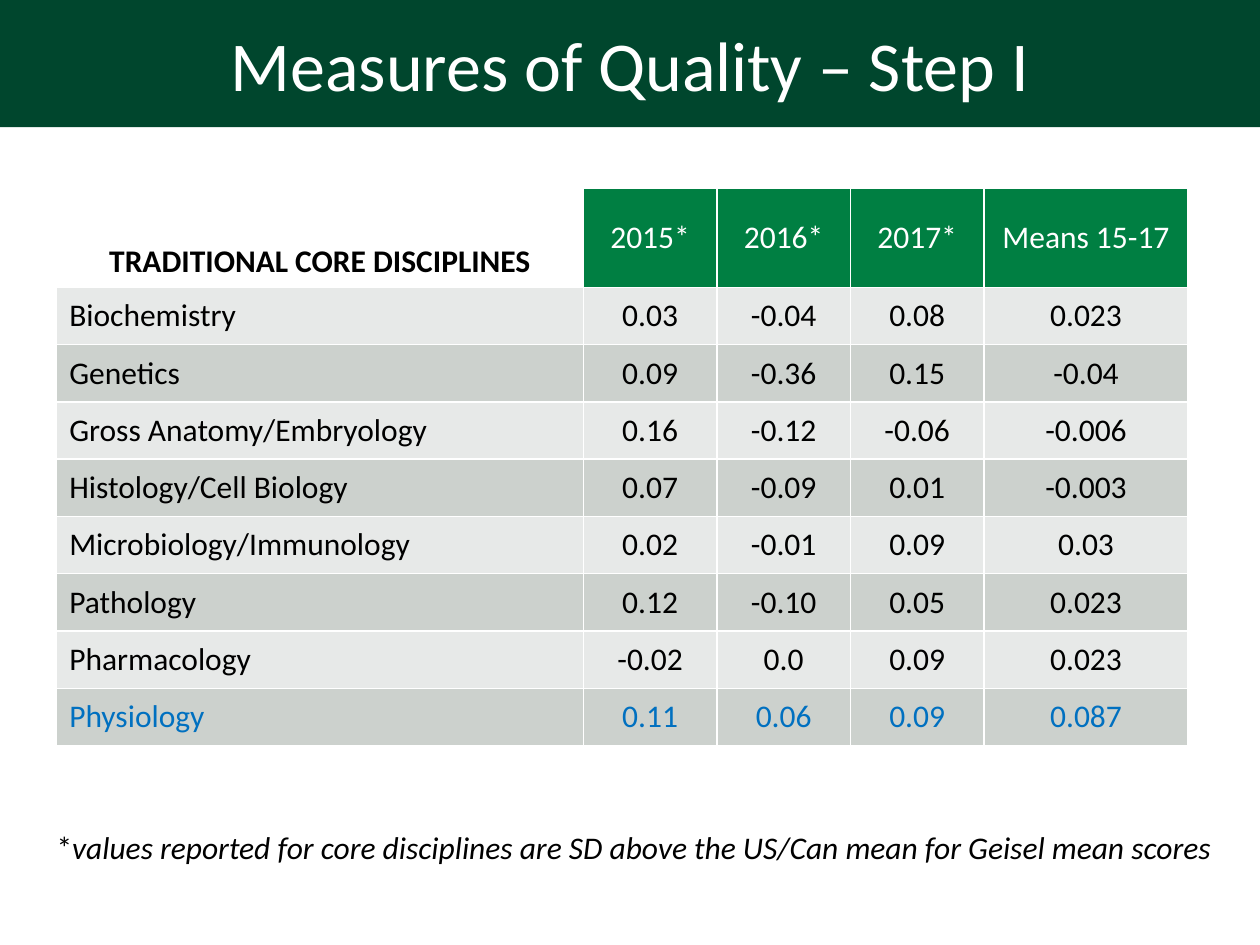
from lxml import etree
from pptx import Presentation
from pptx.dml.color import RGBColor
from pptx.enum.text import MSO_ANCHOR, MSO_AUTO_SIZE, PP_ALIGN
from pptx.oxml.ns import qn
from pptx.util import Inches, Pt

FONT = "Calibri"
COLORS = {
    "banner": "00462D",
    "header": "007F42",
    "light": "E7E9E8",
    "dark": "CCD1CD",
    "white": "FFFFFF",
    "black": "000000",
    "highlight": "0070C0",
}
COL_WIDTHS = [4.18, 1.06, 1.06, 1.06, 1.62]
HEADER_HEIGHT, ROW_HEIGHT = 0.79, 0.455
HEADERS = ["TRADITIONAL CORE DISCIPLINES", "2015*", "2016*", "2017*", "Means 15-17"]
SCORES = [
    ["Biochemistry", "0.03", "-0.04", "0.08", "0.023"],
    ["Genetics", "0.09", "-0.36", "0.15", "-0.04"],
    ["Gross Anatomy/Embryology", "0.16", "-0.12", "-0.06", "-0.006"],
    ["Histology/Cell Biology", "0.07", "-0.09", "0.01", "-0.003"],
    ["Microbiology/Immunology", "0.02", "-0.01", "0.09", "0.03"],
    ["Pathology", "0.12", "-0.10", "0.05", "0.023"],
    ["Pharmacology", "-0.02", "0.0", "0.09", "0.023"],
    ["Physiology", "0.11", "0.06", "0.09", "0.087"],
]


def rgb(name):
    return RGBColor.from_string(COLORS[name])


def style_run(r, color, size=18, bold=False, italic=False):
    r.font.name, r.font.size = FONT, Pt(size)
    r.font.bold, r.font.italic = bold, italic
    r.font.color.rgb = rgb(color)


def set_borders(cell):
    tc_pr = cell._tc.get_or_add_tcPr()
    for side in ("a:lnL", "a:lnR", "a:lnT", "a:lnB"):
        ln = etree.SubElement(tc_pr, qn(side), w=str(Pt(1)))
        fill = etree.SubElement(ln, qn("a:solidFill"))
        etree.SubElement(fill, qn("a:srgbClr"), val=COLORS["white"])


def fill_cell(cell, text, color, fill=None, align=PP_ALIGN.CENTER,
              anchor=MSO_ANCHOR.MIDDLE, bold=False):
    set_borders(cell)
    if fill:
        cell.fill.solid()
        cell.fill.fore_color.rgb = rgb(fill)
    else:
        cell.fill.background()
    cell.vertical_anchor = anchor
    cell.text_frame.text = text
    p = cell.text_frame.paragraphs[0]
    p.alignment = align
    style_run(p.runs[0], color, bold=bold)


def add_title(s, text):
    sp = s.shapes.title
    sp.left, sp.top, sp.width, sp.height = 0, 0, Inches(10), Inches(1.01)
    sp.fill.solid()
    sp.fill.fore_color.rgb = rgb("banner")
    tf = sp.text_frame
    tf.text = text
    tf.vertical_anchor = MSO_ANCHOR.MIDDLE
    p = tf.paragraphs[0]
    p.alignment = PP_ALIGN.CENTER
    style_run(p.runs[0], "white", size=40)


def add_score_table(s):
    height = HEADER_HEIGHT + ROW_HEIGHT * len(SCORES)
    table = s.shapes.add_table(
        len(SCORES) + 1, len(HEADERS), Inches(0.45), Inches(1.49),
        Inches(sum(COL_WIDTHS)), Inches(height)).table
    for column, width in zip(table.columns, COL_WIDTHS):
        column.width = Inches(width)
    for i, row in enumerate(table.rows):
        row.height = Inches(ROW_HEIGHT if i else HEADER_HEIGHT)

    # Header row: the corner cell stays unfilled
    fill_cell(table.cell(0, 0), HEADERS[0], "black",
              anchor=MSO_ANCHOR.BOTTOM, bold=True)
    for col, text in enumerate(HEADERS[1:], 1):
        fill_cell(table.cell(0, col), text, "white", "header")

    # Banded body, with the last discipline highlighted
    for row, values in enumerate(SCORES, 1):
        band = "light" if row % 2 else "dark"
        color = "highlight" if row == len(SCORES) else "black"
        for col, text in enumerate(values):
            align = PP_ALIGN.CENTER if col else PP_ALIGN.LEFT
            fill_cell(table.cell(row, col), text, color, band, align)


def add_footnote(s, mark, text):
    sp = s.shapes.add_textbox(Inches(0.35), Inches(6.52), Inches(9.52), Inches(0.4))
    tf = sp.text_frame
    tf.word_wrap = False
    tf.auto_size = MSO_AUTO_SIZE.SHAPE_TO_FIT_TEXT
    p = tf.paragraphs[0]
    for part, italic in ((mark, False), (text, True)):
        r = p.add_run()
        r.text = part
        style_run(r, "black", italic=italic)


def main():
    prs = Presentation()
    prs.slide_width, prs.slide_height = Inches(10), Inches(7.5)
    s = prs.slides.add_slide(prs.slide_layouts[5])
    add_title(s, "Measures of Quality – Step I")
    add_score_table(s)
    add_footnote(s, "*", "values reported for core disciplines are SD above "
                         "the US/Can mean for Geisel mean scores")
    prs.save("out.pptx")


if __name__ == "__main__":
    main()
